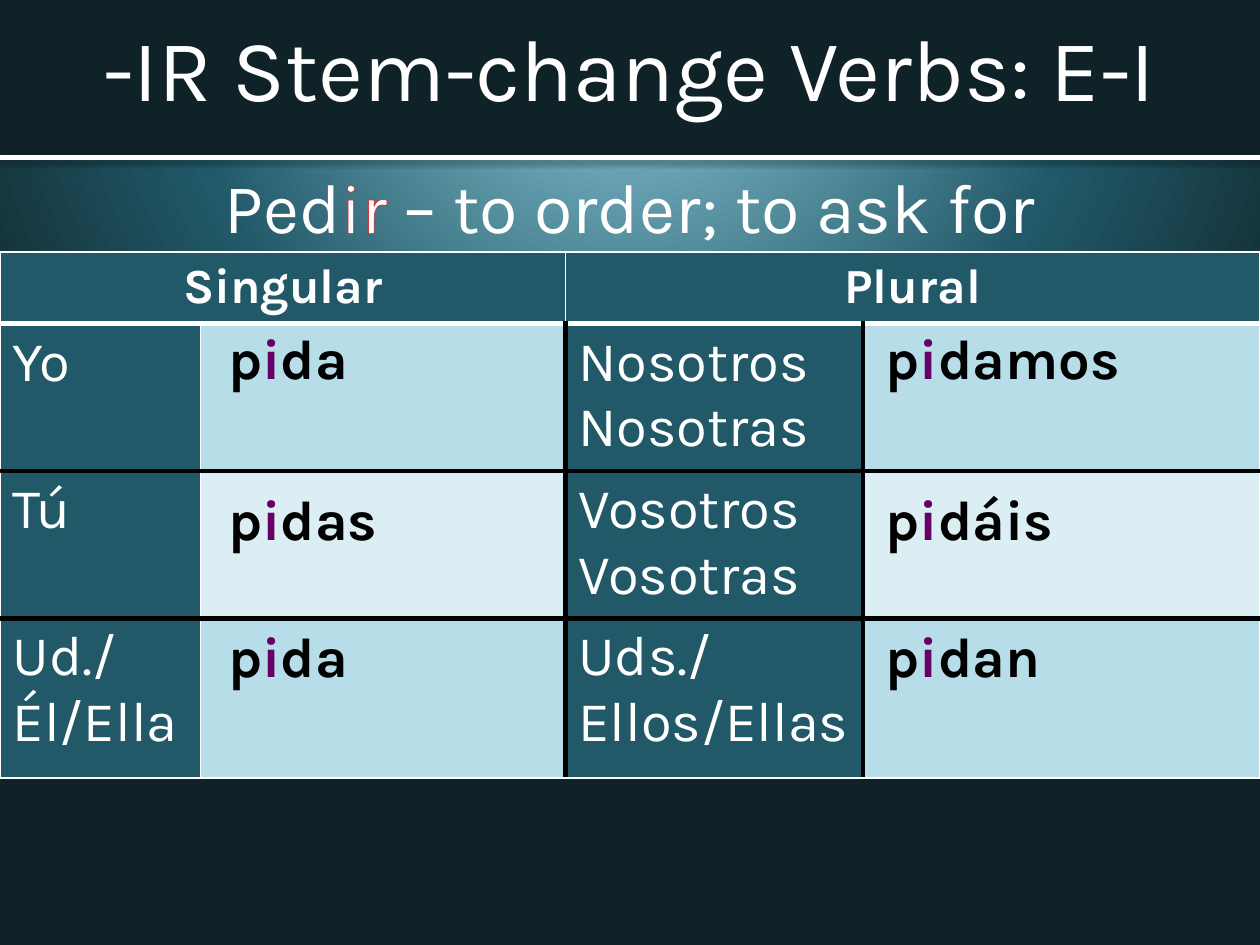
from pptx import Presentation
from pptx.dml.color import RGBColor
from pptx.enum.shapes import MSO_CONNECTOR, MSO_SHAPE
from pptx.enum.text import MSO_ANCHOR, PP_ALIGN
from pptx.oxml import parse_xml
from pptx.oxml.ns import nsdecls, qn
from pptx.util import Inches, Pt

CENTER, LEFT = PP_ALIGN.CENTER, PP_ALIGN.LEFT
TOP, MIDDLE = MSO_ANCHOR.TOP, MSO_ANCHOR.MIDDLE
RECTANGLE, STRAIGHT = MSO_SHAPE.RECTANGLE, MSO_CONNECTOR.STRAIGHT
PLAIN_TABLE = "{2D5ABB26-0587-4C30-8999-92F81FD0307C}"

FONT = "Karla"
WHITE, BLACK, RED, PURPLE = "FFFFFF", "000000", "FF0000", "660066"
NIGHT, TEAL, SKY, PALE = "0F2227", "215968", "B7DEE8", "DBEEF4"

COLUMNS = [1.59, 2.9, 2.36, 3.15]
ROWS = [0.55, 1.17, 1.17, 1.27]
PRONOUNS = [
    ("Yo", "Nosotros\nNosotras"),
    ("Tú", "Vosotros\nVosotras"),
    ("Ud./Él/Ella", "Uds./Ellos/Ellas"),
]
# Top of each row of verb forms, then the singular and plural endings
ENDINGS = [(2.55, "da", "damos"), (3.83, "das", "dáis"), (4.92, "da", "dan")]
VERB_LEFTS = (1.71, 6.93)


def color(value):
    return RGBColor.from_string(value)


def line_xml(tag, value, points):
    return parse_xml(
        f'<a:{tag} {nsdecls("a")} w="{int(Pt(points))}"><a:solidFill>'
        f'<a:srgbClr val="{value}"/></a:solidFill></a:{tag}>')


def write(frame, text, size, bold=False, align=LEFT, before=0):
    """Fill a frame; text is a string or a list of (text, colour, outline)."""
    spans = [(text, WHITE, None)] if isinstance(text, str) else text
    para = frame.paragraphs[0]
    for words, fill, outline in spans:
        for number, part in enumerate(words.split("\n")):
            if number:
                para = frame.add_paragraph()
            para.alignment = align
            para.space_before = Pt(before)
            span = para.add_run()
            span.text = part
            span.font.name, span.font.size, span.font.bold = FONT, Pt(size), bold
            span.font.color.rgb = color(fill)
            if outline:
                span.font._element.insert(0, line_xml("ln", outline, 0.75))


def add_background(slide):
    slide.background.fill.solid()
    properties = slide.element.find(".//" + qn("p:bgPr"))
    stops = "".join(
        f'<a:gs pos="{place * 1000}"><a:srgbClr val="{value}"/></a:gs>'
        for place, value in ((0, "93CDDD"), (58, TEAL), (100, NIGHT)))
    gradient = parse_xml(
        f'<a:gradFill {nsdecls("a")} rotWithShape="1"><a:gsLst>{stops}</a:gsLst>'
        '<a:path path="circle"><a:fillToRect l="50000" t="-80000" r="50000" '
        'b="180000"/></a:path></a:gradFill>')
    properties.replace(properties[0], gradient)


def add_band(slide, left, top, width, height, fill):
    band = slide.shapes.add_shape(
        RECTANGLE, Inches(left), Inches(top), Inches(width), Inches(height))
    band.shadow.inherit = False
    band.fill.solid()
    band.fill.fore_color.rgb = color(fill)
    band.line.fill.background()


def add_text(slide, left, top, width, height, text, anchor=TOP, **style):
    box = slide.shapes.add_textbox(
        Inches(left), Inches(top), Inches(width), Inches(height))
    box.text_frame.word_wrap = True
    box.text_frame.vertical_anchor = anchor
    write(box.text_frame, text, **style)


def add_rule(slide, top):
    rule = slide.shapes.add_connector(
        STRAIGHT, Inches(0), Inches(top), Inches(10), Inches(top))
    rule.line.color.rgb = color(WHITE)
    rule.line.width = Pt(3)
    rule._element.spPr.append(parse_xml(
        f'<a:effectLst {nsdecls("a")}><a:outerShdw blurRad="{int(Pt(3.1))}" '
        f'dist="{int(Pt(1.6))}" dir="5400000" rotWithShape="0">'
        f'<a:srgbClr val="{BLACK}"><a:alpha val="38000"/></a:srgbClr>'
        '</a:outerShdw></a:effectLst>'))


def add_table(slide, left, top, widths, heights):
    frame = slide.shapes.add_table(
        len(heights), len(widths), Inches(left), Inches(top),
        Inches(sum(widths)), Inches(sum(heights)))
    table = frame.table
    table.first_row = table.horz_banding = False
    table._tbl.find(".//" + qn("a:tableStyleId")).text = PLAIN_TABLE
    for column, width in zip(table.columns, widths):
        column.width = Inches(width)
    for row, height in zip(table.rows, heights):
        row.height = Inches(height)
    return table


def vertical_edge(row, edge):
    return (BLACK, 3) if row and edge in (2, 3) else (WHITE, 1)


def horizontal_edge(edge):
    return [(WHITE, 1), (WHITE, 3), (BLACK, 3), (BLACK, 3), (WHITE, 1)][edge]


def format_cell(cell, row, column):
    properties = cell._tc.get_or_add_tcPr()
    edges = {
        "lnL": vertical_edge(row, column), "lnR": vertical_edge(row, column + 1),
        "lnT": horizontal_edge(row), "lnB": horizontal_edge(row + 1),
    }
    for tag, (value, points) in edges.items():
        properties.append(line_xml(tag, value, points))
    form_fill = PALE if row == 2 else SKY
    cell.fill.solid()
    cell.fill.fore_color.rgb = color(
        form_fill if row and column % 2 else TEAL)


def add_pronoun_table(slide):
    table = add_table(slide, 0, 2, COLUMNS, ROWS)
    for row in range(len(ROWS)):
        for column in range(len(COLUMNS)):
            format_cell(table.cell(row, column), row, column)
    for column, heading in ((0, "Singular"), (2, "Plural")):
        table.cell(0, column).merge(table.cell(0, column + 1))
        write(table.cell(0, column).text_frame, heading, 28, bold=True, align=CENTER)
    for row, pair in enumerate(PRONOUNS, start=1):
        for column, pronoun in zip((0, 2), pair):
            write(table.cell(row, column).text_frame, pronoun, 32)


def add_verb_form(slide, left, top, ending):
    cell = add_table(slide, left, top, [2.5], [0.63]).cell(0, 0)
    cell.fill.background()
    spans = [("p", BLACK, None), ("i", PURPLE, None), (ending, BLACK, None)]
    write(cell.text_frame, spans, 32, bold=True)


def main():
    deck = Presentation()
    deck.slide_width, deck.slide_height = Inches(10), Inches(7.5)
    slide = deck.slides.add_slide(deck.slide_layouts[6])
    add_background(slide)

    # Heading and verb
    add_band(slide, 0, 0, 10, 1.25, NIGHT)
    verb = [("Ped", WHITE, None), ("ir ", WHITE, RED),
            ("– to order; to ask for", WHITE, None)]
    add_text(slide, 0, 1.25, 10, 5.2, verb, size=40, align=CENTER, before=3.6)
    add_rule(slide, 1.25)
    add_text(slide, 0, 0, 10, 1.06, "-IR Stem-change Verbs: E-I",
             anchor=MIDDLE, size=50, align=CENTER)

    # Conjugation chart
    add_pronoun_table(slide)
    for top, *endings in ENDINGS:
        for left, ending in zip(VERB_LEFTS, endings):
            add_verb_form(slide, left, top, ending)

    deck.save("out.pptx")


if __name__ == "__main__":
    main()
